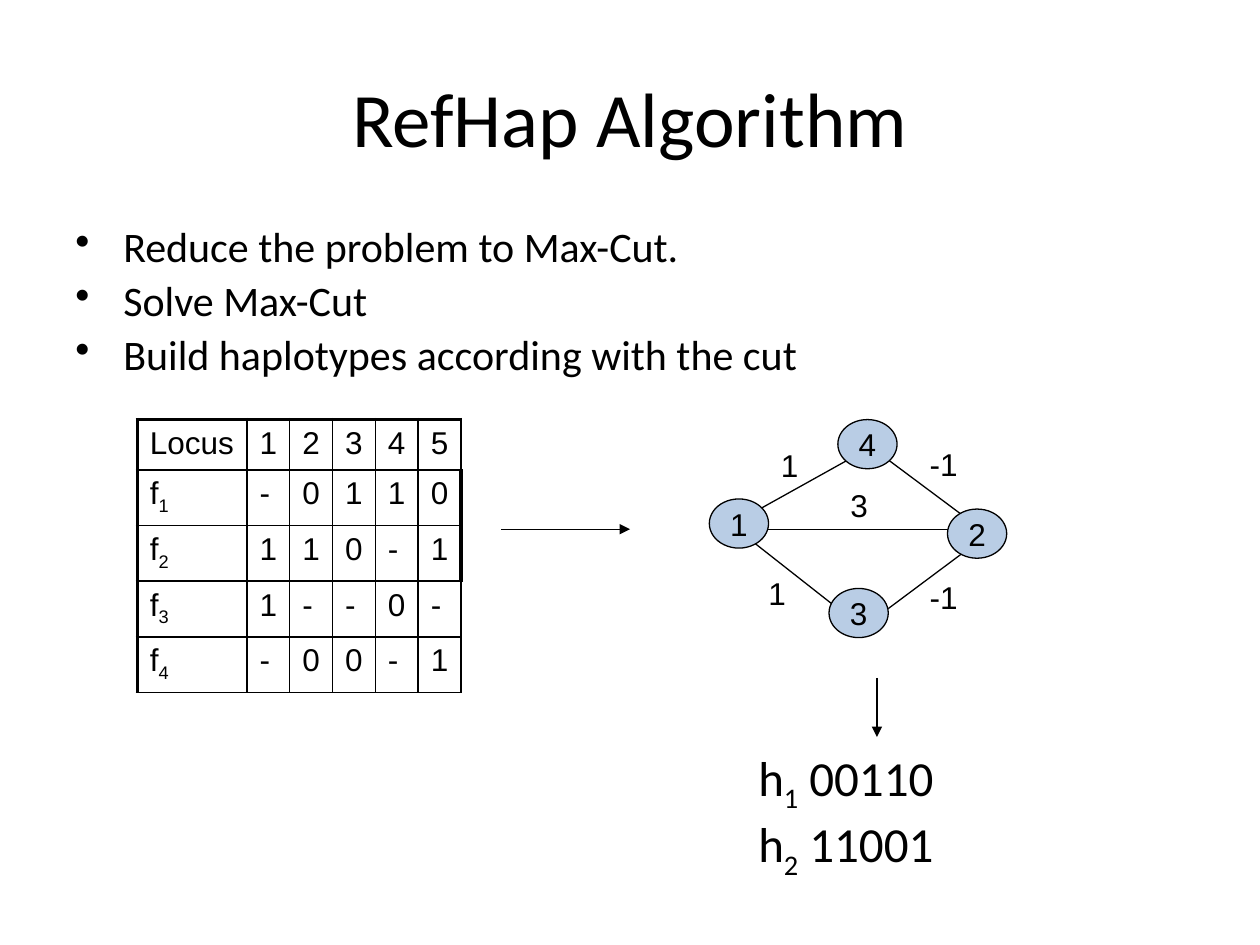
from lxml import etree
from pptx import Presentation
from pptx.dml.color import RGBColor
from pptx.enum.shapes import MSO_CONNECTOR, MSO_SHAPE
from pptx.enum.text import MSO_ANCHOR, MSO_AUTO_SIZE, PP_ALIGN
from pptx.oxml.ns import qn
from pptx.util import Inches, Pt

STRAIGHT = MSO_CONNECTOR.STRAIGHT
OVAL = MSO_SHAPE.OVAL
MIDDLE = MSO_ANCHOR.MIDDLE
CENTER = PP_ALIGN.CENTER
GROW = MSO_AUTO_SIZE.SHAPE_TO_FIT_TEXT
BLACK, NODE_BLUE = "000000", "B9CDE5"
WIDTH, HEIGHT = Inches(10), Inches(7.5)
COLUMNS, ROWS = 100, 75

LOCI = [
    ["Locus", "1", "2", "3", "4", "5"],
    ["f_1", "-", "0", "1", "1", "0"],
    ["f_2", "1", "1", "0", "-", "1"],
    ["f_3", "1", "-", "-", "0", "-"],
    ["f_4", "-", "0", "0", "-", "1"],
]
EDGES = [
    (4, 7.1, 11, 3.2), (3.2, 9.5, 10.2, 15), (4, 8.7, 19.7, 8.7),
    (14.2, 15, 20.5, 10.3), (14.2, 3.2, 20.5, 7.9),
]
WEIGHTS = [
    ("3", 10.2, 4.8), ("1", 4.7, 1.6), ("1", 3.7, 11.8),
    ("-1", 16.5, 12.1), ("-1", 16.5, 1.5),
]
NODES = [("1", 0, 6.3), ("4", 10.2, 0), ("2", 18.9, 7.1), ("3", 9.5, 13.4)]


def col(count):
    """Turn grid columns into a length."""
    return round(WIDTH * count / COLUMNS)


def row(count):
    """Turn grid rows into a length."""
    return round(HEIGHT * count / ROWS)


def place(box):
    """Turn a grid box into left, top, width and height."""
    left, top, width, height = box
    return col(left), row(top), col(width), row(height)


def color(value):
    """Turn a hex string into a colour."""
    return RGBColor.from_string(value)


def write(paragraph, text, size, face):
    """Fill a paragraph, lowering the character after each underscore."""
    font = paragraph.font
    font.size, font.name, font.color.rgb = Pt(size), face, color(BLACK)
    head, *lowered = text.split("_")
    paragraph.add_run().text = head
    for part in lowered:
        subscript = paragraph.add_run()
        subscript.text = part[0]
        subscript.font._element.set("baseline", "-25000")
        if part[1:]:
            paragraph.add_run().text = part[1:]


def add_text(slide, box, lines, size, face, wrap=True):
    """Add a text box with one paragraph per line and return its frame."""
    frame = slide.shapes.add_textbox(*place(box)).text_frame
    frame.word_wrap = wrap
    for index, line in enumerate(lines):
        paragraph = frame.add_paragraph() if index else frame.paragraphs[0]
        write(paragraph, line, size, face)
    return frame


def add_line(slide, x1, y1, x2, y2, arrow=False):
    """Draw a thin straight line, with an arrowhead if wanted."""
    line = slide.shapes.add_connector(STRAIGHT, col(x1), row(y1), col(x2), row(y2))
    line.line.color.rgb = color(BLACK)
    line.line.width = Pt(0.75)
    properties = line._element.spPr
    if arrow:
        etree.SubElement(properties.find(qn("a:ln")), qn("a:tailEnd"), type="triangle")
    etree.SubElement(properties, qn("a:effectLst"))


def add_title(slide, box):
    """Add the centred title."""
    frame = add_text(slide, box, ["RefHap Algorithm"], 44, "Calibri")
    frame.vertical_anchor = MIDDLE
    frame.paragraphs[0].alignment = CENTER


def add_steps(slide, box):
    """Add the bulleted steps of the algorithm."""
    steps = [
        "Reduce the problem to Max-Cut.",
        "Solve Max-Cut",
        "Build haplotypes according with the cut",
    ]
    for step in add_text(slide, box, steps, 24, "Calibri").paragraphs:
        step.line_spacing = 0.9
        step.space_before = Pt(4.8)
        properties = step._p.get_or_add_pPr()
        properties.set("marL", str(Inches(0.38)))
        properties.set("indent", str(-Inches(0.38)))
        bullet = etree.Element(qn("a:buChar"), char="•")
        properties.find(qn("a:defRPr")).addprevious(bullet)


def set_borders(cell, widths):
    """Give a cell black borders in the order left, right, top, bottom."""
    properties = cell._tc.get_or_add_tcPr()
    for index, (side, width) in enumerate(zip("LRTB", widths)):
        border = etree.Element(qn(f"a:ln{side}"), w=str(Pt(width)))
        fill = etree.SubElement(border, qn("a:solidFill"))
        etree.SubElement(fill, qn("a:srgbClr"), val=BLACK)
        properties.insert(index, border)


def add_loci(slide, box):
    """Add the table of fragments by locus."""
    table = slide.shapes.add_table(len(LOCI), len(LOCI[0]), *place(box)).table
    table.first_row = table.horz_banding = False
    last = len(LOCI[0]) - 1
    for c, column in enumerate(table.columns):
        column.width = col(3.4 if c else 8.7)
    for r, values in enumerate(LOCI):
        table.rows[r].height = row(3.4)
        for c, value in enumerate(values):
            cell = table.cell(r, c)
            cell.fill.background()
            write(cell.text_frame.paragraphs[0], value, 18, "Arial")
            left = 1 if c else 2.25
            right = 2.25 if c == last and r in (1, 2) else 1
            top = 1 if r else 2.25
            set_borders(cell, (left, right, top, 1))


def add_graph(slide, box):
    """Draw the weighted graph of fragments."""
    left, top = box[:2]
    for x1, y1, x2, y2 in EDGES:
        add_line(slide, left + x1, top + y1, left + x2, top + y2)
    for weight, x, y in WEIGHTS:
        width = 2.6 + 0.8 * len(weight)
        label_box = (left + x, top + y, width, 4)
        label = add_text(slide, label_box, [weight], 18, "Arial", wrap=False)
        label.auto_size = GROW
    for name, x, y in NODES:
        node = slide.shapes.add_shape(OVAL, *place((left + x, top + y, 4.7, 3.9)))
        node.shadow.inherit = False
        node.fill.solid()
        node.fill.fore_color.rgb = color(NODE_BLUE)
        node.line.color.rgb = color(BLACK)
        node.line.width = Pt(0.75)
        node.text_frame.word_wrap = False
        node.text_frame.vertical_anchor = MIDDLE
        caption = node.text_frame.paragraphs[0]
        caption.alignment = CENTER
        write(caption, name, 18, "Arial")


def add_haplotypes(slide, box):
    """Add the two resulting haplotypes."""
    frame = add_text(slide, box, ["h_1 00110", "h_2 11001"], 28, "Calibri")
    frame.auto_size = GROW


def main():
    """Build and save the slide."""
    deck = Presentation()
    deck.slide_width, deck.slide_height = WIDTH, HEIGHT
    slide = deck.slides.add_slide(deck.slide_layouts[6])
    add_title(slide, (5, 3, 90, 12.5))
    add_steps(slide, (5, 17.5, 89.9, 11.3))
    add_loci(slide, (10.9, 33.3, 25.7, 17))
    add_line(slide, 39.8, 42, 50, 42, arrow=True)
    add_graph(slide, (56.3, 33.3, 23.6, 17.3))
    add_line(slide, 69.6, 53.8, 69.6, 58.5, arrow=True)
    add_haplotypes(slide, (59.2, 58.8, 36.4, 10.3))
    deck.save("out.pptx")


if __name__ == "__main__":
    main()
